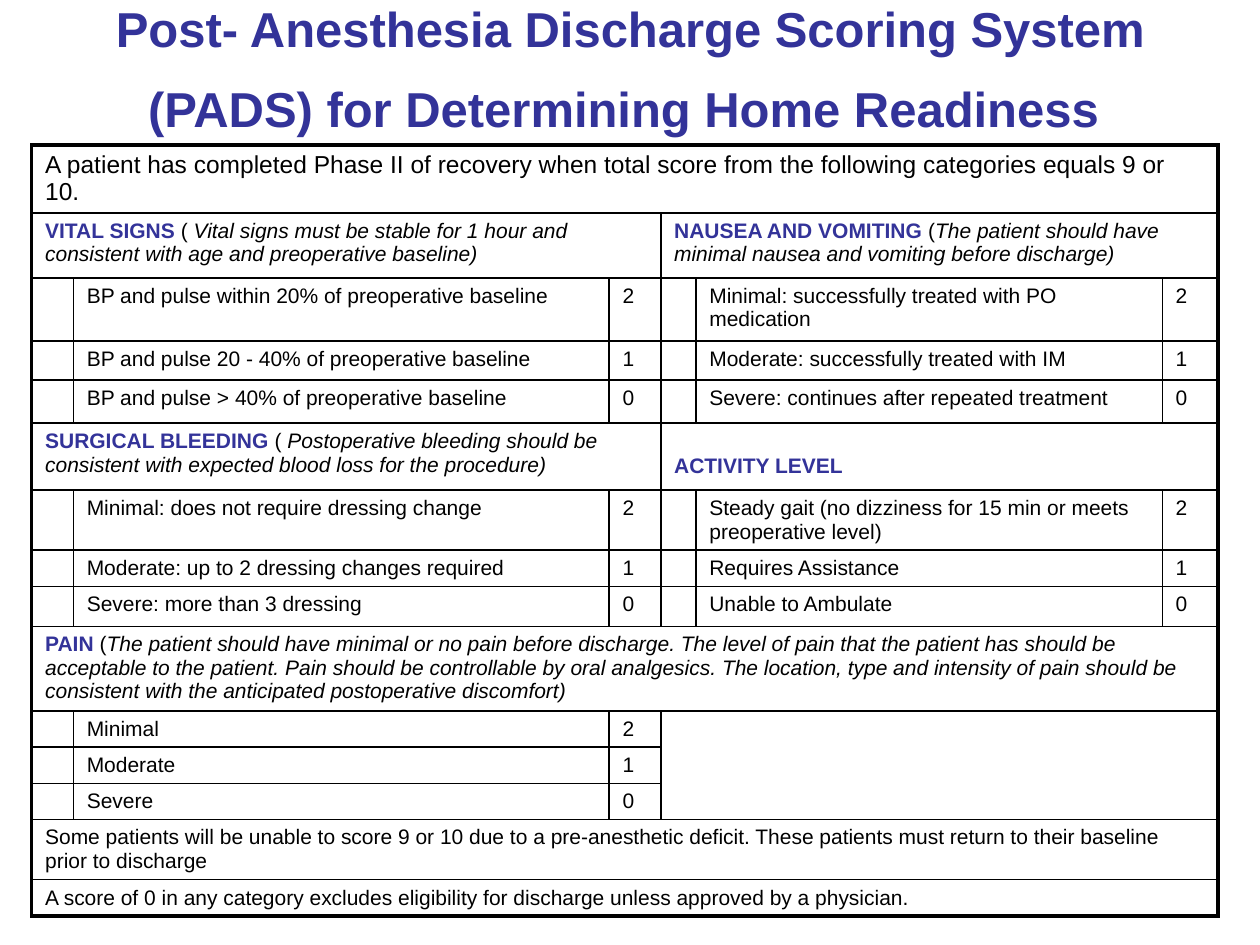
from dataclasses import dataclass

from lxml.etree import SubElement
from pptx import Presentation
from pptx.dml.color import RGBColor
from pptx.enum.text import MSO_ANCHOR as Anchor, PP_ALIGN as Align
from pptx.oxml.ns import qn
from pptx.util import Cm, Pt


@dataclass(frozen=True)
class Theme:
    font: str = "Arial"
    accent: str = "333399"
    ink: str = "000000"
    paper: str = "FFFFFF"
    title: float = 28
    intro: float = 14
    body: float = 12
    frame: float = 2.25
    rule: float = 1


theme = Theme()


def add_text(paragraph, text, size=theme.body, color=theme.ink, bold=False, italic=False):
    run = paragraph.add_run()
    run.text = text
    font = run.font
    font.name, font.size, font.bold, font.italic = theme.font, Pt(size), bold, italic
    font.color.rgb = RGBColor.from_string(color)


def add_border(cell, side, width):
    line = SubElement(cell._tc.get_or_add_tcPr(), qn(f"a:ln{side}"), w=str(Pt(width)))
    fill = SubElement(line, qn("a:solidFill"))
    SubElement(fill, qn("a:srgbClr"), val=theme.ink)


presentation = Presentation()
presentation.slide_width, presentation.slide_height = Cm(25.4), Cm(19.05)
slide = presentation.slides.add_slide(presentation.slide_layouts[6])

title_frame = slide.shapes.add_textbox(Cm(0.64), Cm(0), Cm(24.13), Cm(2.3)).text_frame
title_frame.word_wrap = True
title_frame.vertical_anchor = Anchor.MIDDLE
title = title_frame.paragraphs[0]
title.alignment = Align.CENTER
title.line_spacing = 1.36
add_text(title, "Post- Anesthesia Discharge Scoring System (PADS) for Determining Home Readiness ",
         size=theme.title, color=theme.accent, bold=True)

column_widths = [0.84, 10.8, 1.04, 0.71, 9.4, 1.12]
row_heights = [1.37, 1.31, 1.27, 0.79, 0.87, 1.35, 1.21, 0.73, 0.81, 1.67,
               0.73, 0.73, 0.73, 1.21, 0.73]
row_count, column_count = len(row_heights), len(column_widths)
table = slide.shapes.add_table(row_count, column_count, Cm(0.64), Cm(2.92),
                               Cm(sum(column_widths)), Cm(sum(row_heights))).table
table.first_row = table.horz_banding = False
for column, width in zip(table.columns, column_widths):
    column.width = Cm(width)
for row, height in zip(table.rows, row_heights):
    row.height = Cm(height)
for cell in table.iter_cells():
    cell.margin_left = Cm(0.27)
    cell.margin_bottom = Cm(0.05)

notes = {
    0: ("A patient has completed Phase II of recovery when total score from the following "
        "categories equals 9 or 10.", theme.intro),
    13: ("Some patients will be unable to score 9 or 10 due to a pre-anesthetic deficit. "
         "These patients must return to their baseline prior to discharge", theme.body),
    14: ("A score of 0 in any category excludes eligibility for discharge unless approved "
         "by a physician.", theme.body),
}
categories = [
    (1, 0, 2, "VITAL SIGNS ", "(",
     " Vital signs must be stable for 1 hour and consistent with age and preoperative baseline)",
     ["BP and pulse within 20% of preoperative baseline",
      "BP and pulse 20 - 40% of preoperative baseline",
      "BP and pulse > 40% of preoperative baseline"]),
    (1, 3, 5, "NAUSEA AND VOMITING", " (",
     "The patient should have minimal nausea and vomiting before discharge)",
     ["Minimal: successfully treated with PO medication",
      "Moderate: successfully treated with IM",
      "Severe: continues after repeated treatment"]),
    (5, 0, 2, "SURGICAL BLEEDING ", "(",
     " Postoperative bleeding should be consistent with expected blood loss for the procedure)",
     ["Minimal: does not require dressing change",
      "Moderate: up to 2 dressing changes required",
      "Severe: more than 3 dressing"]),
    (5, 3, 5, "ACTIVITY LEVEL", "", "",
     ["Steady gait (no dizziness for 15 min or meets preoperative level)",
      "Requires Assistance",
      "Unable to Ambulate"]),
    (9, 0, 5, "PAIN ", "(",
     "The patient should have minimal or no pain before discharge. The level of pain that the "
     "patient has should be acceptable to the patient. Pain should be controllable by oral "
     "analgesics. The location, type and intensity of pain should be consistent with the "
     "anticipated postoperative discomfort)",
     ["Minimal", "Moderate", "Severe"]),
]

for row, (text, size) in notes.items():
    note = table.cell(row, 0)
    note.merge(table.cell(row, column_count - 1))
    add_text(note.text_frame.paragraphs[0], text, size=size)

for top, first, last, name, bracket, guidance, levels in categories:
    heading = table.cell(top, first)
    heading.merge(table.cell(top, last))
    paragraph = heading.text_frame.paragraphs[0]
    add_text(paragraph, name, color=theme.accent, bold=True)
    if guidance:
        add_text(paragraph, bracket)
        add_text(paragraph, guidance, italic=True)
    else:
        heading.vertical_anchor = Anchor.BOTTOM
        heading.margin_bottom = Cm(0.25)
    for step, level in enumerate(levels):
        row = top + 1 + step
        add_text(table.cell(row, first + 1).text_frame.paragraphs[0], level)
        add_text(table.cell(row, first + 2).text_frame.paragraphs[0], str(2 - step))

table.cell(10, 3).merge(table.cell(12, 5))

for row in range(row_count):
    for column in range(column_count):
        cell = table.cell(row, column)
        paragraph = cell.text_frame.paragraphs[0]
        if not paragraph.runs:
            SubElement(paragraph._p, qn("a:endParaRPr"), sz=str(theme.body * 100))
        if cell.is_spanned:
            continue
        right = column + (cell.span_width if cell.is_merge_origin else 1)
        bottom = row + (cell.span_height if cell.is_merge_origin else 1)
        edges = {"L": column == 0, "R": right == column_count,
                 "T": row == 0, "B": bottom == row_count}
        for side, outer in edges.items():
            add_border(cell, side, theme.frame if outer else theme.rule)
        cell.fill.solid()
        cell.fill.fore_color.rgb = RGBColor.from_string(theme.paper)

presentation.save("out.pptx")
